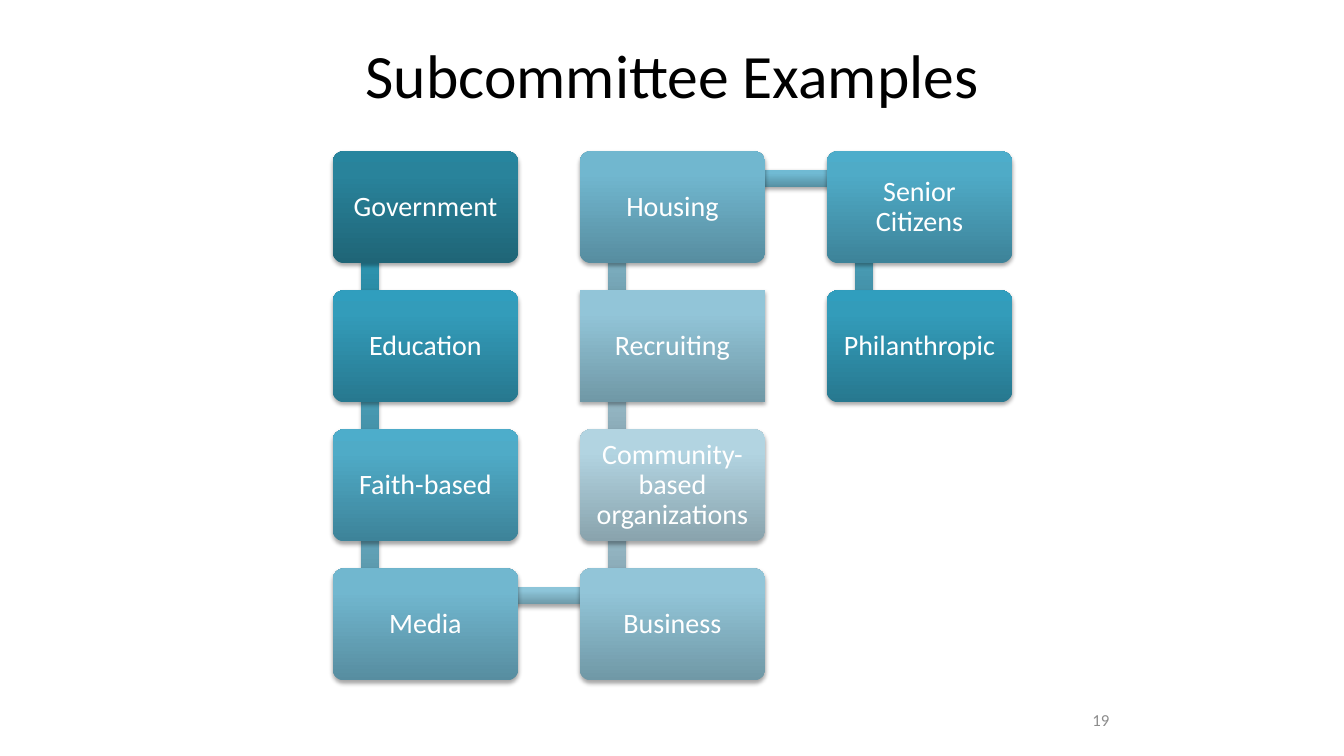
from dataclasses import dataclass

from lxml import etree
from pptx import Presentation, util as u
from pptx.dml.color import RGBColor
from pptx.enum import shapes, text
from pptx.oxml import ns


@dataclass(frozen=True)
class Theme:
    font: str = "Calibri"
    title_size: int = 44
    label_size: int = 20
    number_size: int = 12
    title_color: str = "000000"
    label_color: str = "FFFFFF"
    number_color: str = "8C8C8C"
    stops: tuple = (0, 80, 100)
    # Gradient colours from bottom to top, from the darkest level to the palest
    box_tones: tuple = (
        ("1F6577", "29839B", "27859E"),
        ("27788F", "339CBA", "309EBE"),
        ("3D8399", "4FABC7", "4DADCB"),
        ("578DA0", "71B7CF", "70B9D2"),
        ("7098A6", "92C5D8", "91C7DA"),
        ("89A3AD", "B2D4E1", "B2D5E3"),
    )
    link_tones: tuple = (
        ("28829A", "34A9C8", "32ABCC"),
        ("40889E", "52B1CD", "50B3D0"),
        ("5690A2", "70BAD3", "6FBCD5"),
        ("6C98A7", "8DC5D9", "8CC6DB"),
        ("82A0AC", "A9D0DF", "A9D2E2"),
    )


@dataclass(frozen=True)
class Grid:
    left: float = 3.3
    top: float = 1.5
    col_pitch: float = 2.45
    row_pitch: float = 1.38
    width: float = 1.84
    height: float = 1.11
    rows: int = 4

    def cell(self, i):
        """Top-left corner of step i on a path going down, up and down again."""
        col, row = divmod(i, self.rows)
        if col % 2:
            row = self.rows - 1 - row
        return self.left + col * self.col_pitch, self.top + row * self.row_pitch


def child(parent, tag, **attrs):
    return etree.SubElement(parent, ns.qn(tag), {k: str(v) for k, v in attrs.items()})


class SlideBuilder:
    LINK = 0.17

    def __init__(self, prs, theme, grid):
        self.theme, self.grid = theme, grid
        self.s = prs.slides.add_slide(prs.slide_layouts[5])

    def set_text(self, sp, words, size, color, anchor=text.MSO_ANCHOR.MIDDLE, inset=None):
        tf = sp.text_frame
        tf.text, tf.word_wrap, tf.vertical_anchor = words, True, anchor
        tf.auto_size = text.MSO_AUTO_SIZE.NONE
        if inset is not None:
            tf.margin_left = tf.margin_right = u.Inches(inset)
            tf.margin_top = tf.margin_bottom = u.Inches(inset)
        p = tf.paragraphs[0]
        p.alignment, p.line_spacing = text.PP_ALIGN.CENTER, 0.9
        font = p.runs[0].font
        font.name, font.size = self.theme.font, u.Pt(size)
        font.color.rgb = RGBColor.from_string(color)

    def title(self, words):
        sp = self.s.shapes.title
        sp.left, sp.top = u.Inches(0.92), u.Inches(0.4)
        sp.width, sp.height = u.Inches(11.5), u.Inches(1.45)
        self.set_text(sp, words, self.theme.title_size, self.theme.title_color,
                      text.MSO_ANCHOR.TOP)

    def number(self, words):
        sp = self.s.shapes.add_textbox(*map(u.Inches, (9.42, 6.95, 3, 0.4)))
        self.set_text(sp, words, self.theme.number_size, self.theme.number_color)

    def glossy(self, kind, area, tones):
        """Borderless shape with a three-stop gradient and a soft shadow below."""
        sp = self.s.shapes.add_shape(kind, *map(u.Inches, area))
        sp.line.fill.background()
        sp.fill.gradient()
        sp.fill.gradient_angle = 90
        stops = sp._element.spPr.find(".//" + ns.qn("a:gsLst"))
        for stop in list(stops):
            stops.remove(stop)
        for pos, tone in zip(self.theme.stops, tones):
            child(child(stops, "a:gs", pos=pos * 1000), "a:srgbClr", val=tone)
        sp.shadow.inherit = False
        effects = sp._element.spPr.find(ns.qn("a:effectLst"))
        shadow = child(effects, "a:outerShdw", blurRad=u.Pt(3.1), dist=u.Pt(1.8),
                       dir=5400000, rotWithShape=0)
        child(child(shadow, "a:srgbClr", val="000000"), "a:alpha", val=35000)
        return sp

    def link(self, i, level):
        """Bar from step i to the next step, running behind both boxes."""
        (x1, y1), (x2, y2) = self.grid.cell(i), self.grid.cell(i + 1)
        x, y = min(x1, x2) + 0.37, min(y1, y2) + 0.27
        w, h = abs(x2 - x1), abs(y2 - y1)
        if w > h:
            area = x, y - self.LINK / 2, w, self.LINK
        else:
            area = x - self.LINK / 2, y, self.LINK, h
        self.glossy(shapes.MSO_SHAPE.RECTANGLE, area, self.theme.link_tones[level])

    def box(self, i, label, level, rounded=True):
        kind = shapes.MSO_SHAPE.ROUNDED_RECTANGLE if rounded else shapes.MSO_SHAPE.RECTANGLE
        g = self.grid
        sp = self.glossy(kind, (*g.cell(i), g.width, g.height), self.theme.box_tones[level])
        if rounded:
            sp.adjustments[0] = 0.1
        self.set_text(sp, label, self.theme.label_size, self.theme.label_color, inset=0.11)


SUBCOMMITTEES = (
    "Government", "Education", "Faith-based", "Media",
    "Business", "Community-based organizations", "Recruiting", "Housing",
    "Senior Citizens", "Philanthropic",
)


def main():
    prs = Presentation()
    prs.slide_width, prs.slide_height = u.Inches(13.33), u.Inches(7.5)
    slide = SlideBuilder(prs, Theme(), Grid())
    slide.title("Subcommittee Examples")
    count = len(SUBCOMMITTEES)
    for i, name in enumerate(SUBCOMMITTEES):
        # Tones fade towards the middle of the path and darken again
        if i < count - 1:
            slide.link(i, min(i, count - 1 - i))
        slide.box(i, name, min(i, count - i), rounded=name != "Recruiting")
    slide.number("19")
    prs.save("out.pptx")


if __name__ == "__main__":
    main()
